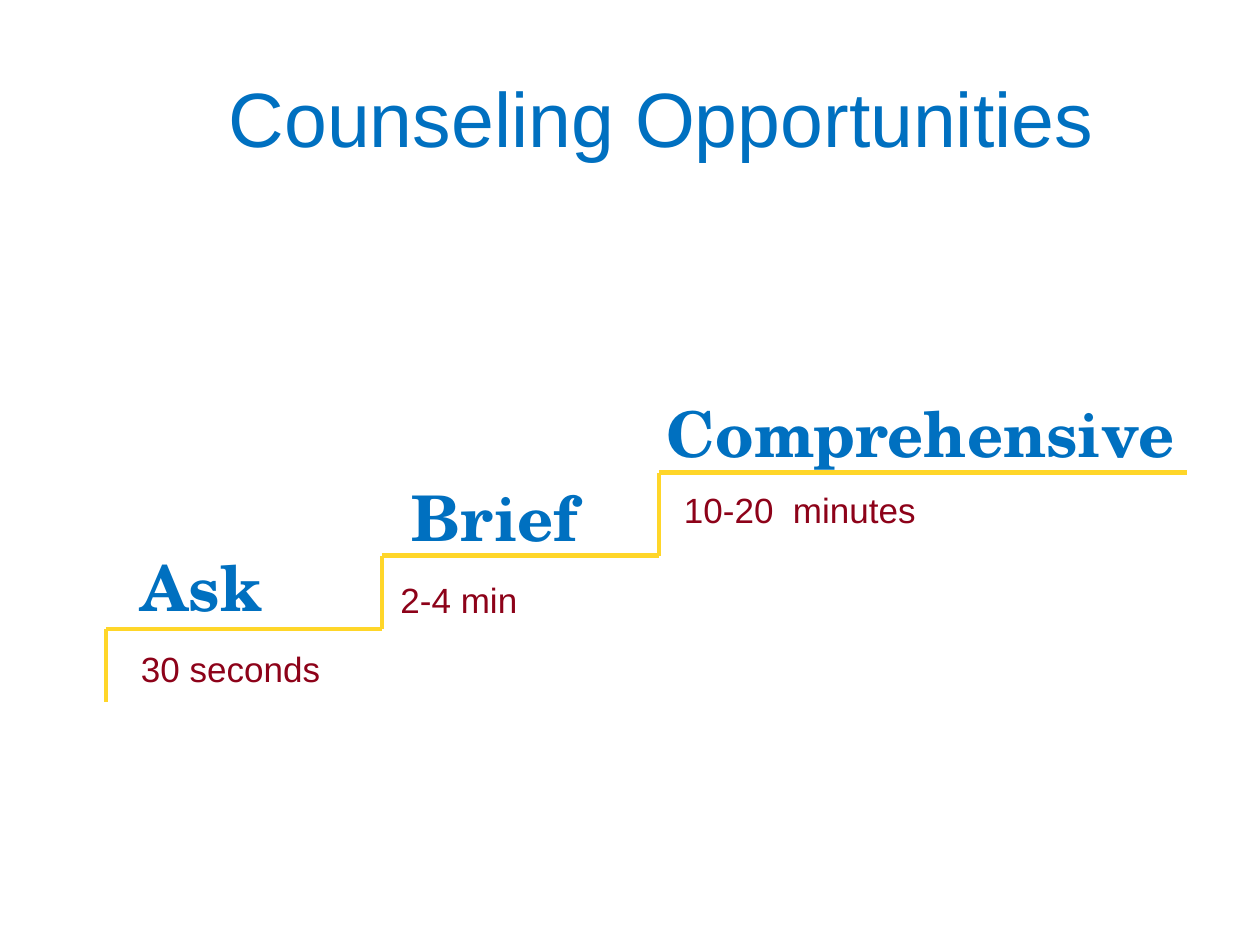
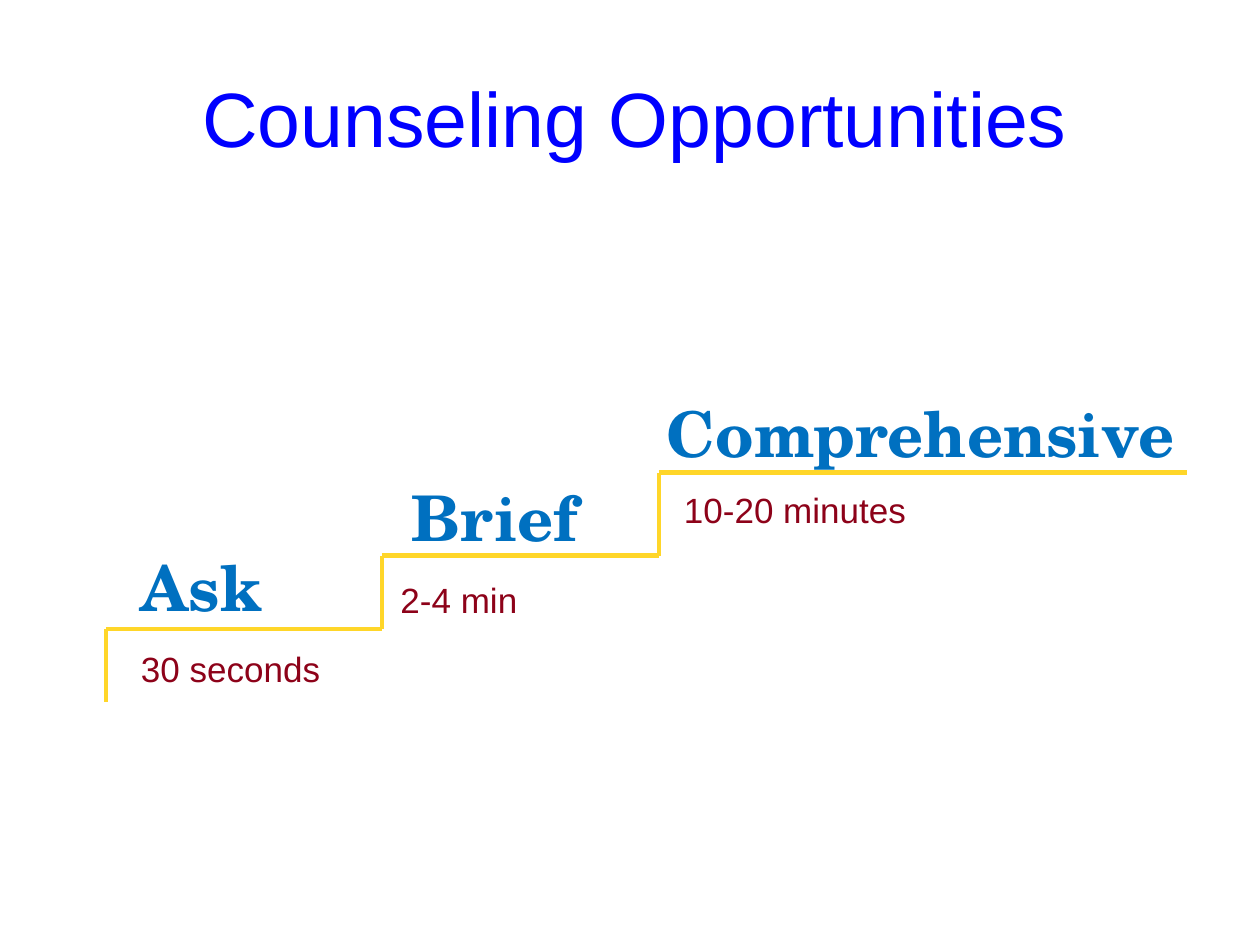
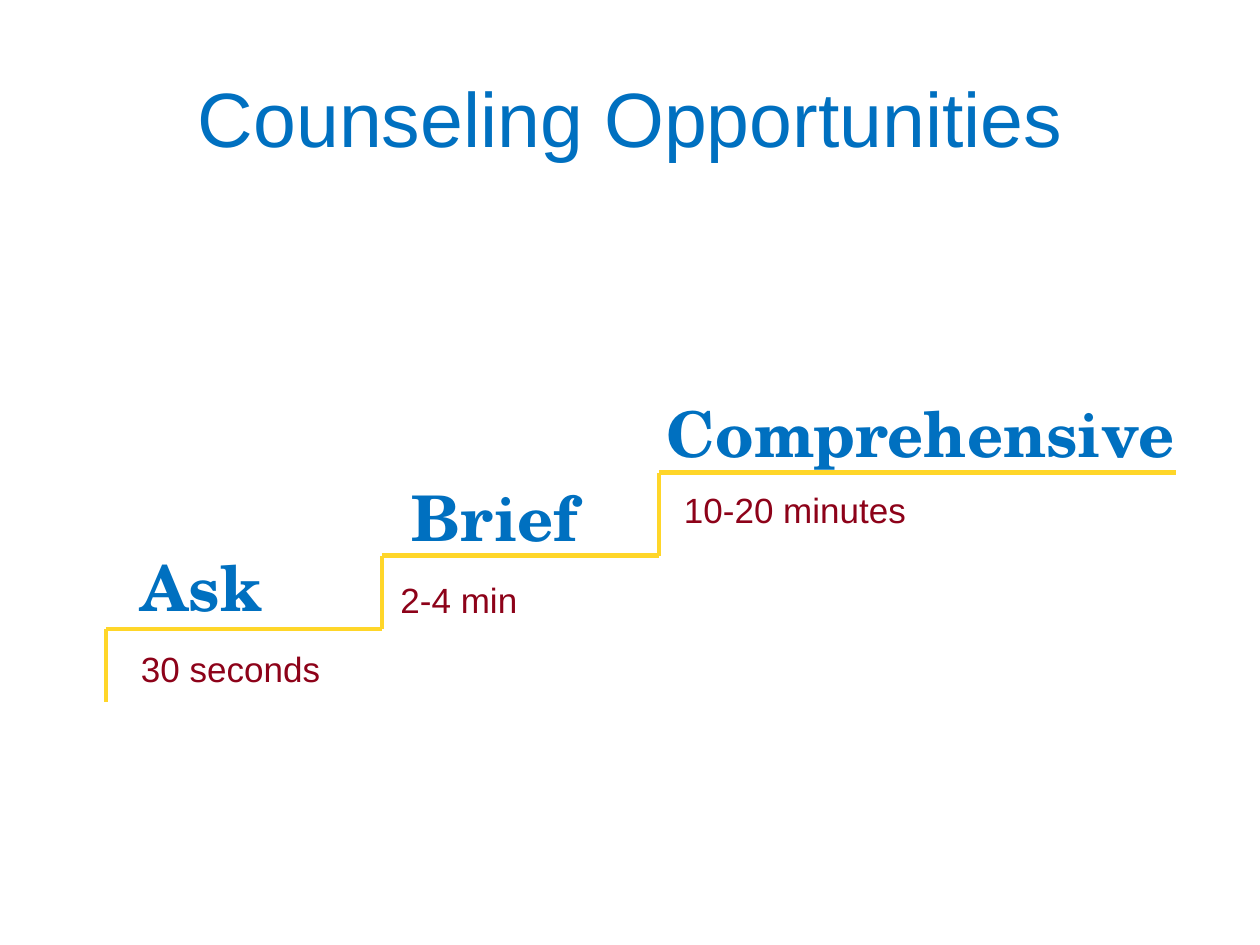
from dataclasses import dataclass
from itertools import pairwise

from pptx import Presentation
from pptx.dml.color import RGBColor
from pptx.enum.shapes import MSO_CONNECTOR
from pptx.enum.text import MSO_ANCHOR, MSO_AUTO_SIZE, PP_ALIGN
from pptx.oxml.xmlchemy import OxmlElement
from pptx.util import Inches, Pt


@dataclass(frozen=True)
class Theme:
    """Colours, fonts and type sizes shared by all slides."""
    blue: str = "0070C0"
    bright_blue: str = "0000FF"
    maroon: str = "8D0219"
    gold: str = "FFD629"
    body_font: str = "Arial"
    level_font: str = "TeX Gyre Schola"
    title_size: float = 44
    level_size: float = 36
    time_size: float = 20
    stair_width: float = 2.5


THEME = Theme()
STAIRS = [(0.84, 5.57), (0.84, 4.99), (3.03, 4.99), (3.03, 4.41), (5.23, 4.41), (5.23, 3.75)]
LEVELS = [
    ("Ask", 1.02, 4.3, 1.88, 0.1),
    ("Brief", 3.17, 3.75, 1.97, 0.1),
    ("Comprehensive", 5.08, 3.08, 4.92, 0.21),
]
TIMES = [("30 seconds", 1.02, 5.09, 2), ("2-4 min", 3.08, 4.54, 2)]
LONGEST_TIME = (5.33, 3.83, 3.76)
SLIDES = [
    (0.5, 9.5, THEME.blue, "10-20  minutes", 9.42),
    (0.25, 9.58, THEME.bright_blue, "10-20 minutes", 9.42),
    (0.17, 9.67, THEME.blue, "10-20 minutes", 9.33),
]


class Deck:
    """Draws styled elements on the current slide."""

    def __init__(self, theme):
        """Start an empty deck."""
        self.theme = theme
        self.presentation = Presentation()
        self.presentation.slide_width = Inches(10)
        self.presentation.slide_height = Inches(7.5)
        self.page = None

    def add_page(self):
        """Open a new blank slide."""
        self.page = self.presentation.slides.add_slide(self.presentation.slide_layouts[6])

    def text(self, words, left, top, width, height, font, size, color, bold=False, inset=0.1):
        """Add a one-paragraph text box."""
        box = self.page.shapes.add_textbox(Inches(left), Inches(top), Inches(width), Inches(height))
        frame = box.text_frame
        frame.word_wrap = True
        frame.margin_left = Inches(inset)
        para = frame.paragraphs[0]
        para.text = words
        para.font.name = font
        para.font.size = Pt(size)
        para.font.bold = bold
        para.font.color.rgb = RGBColor.from_string(color)
        return frame

    def title(self, words, left, width, color):
        """Add a centred slide title."""
        frame = self.text(words, left, 0.3, width, 1.25,
                          self.theme.body_font, self.theme.title_size, color)
        frame.vertical_anchor = MSO_ANCHOR.MIDDLE
        frame.paragraphs[0].alignment = PP_ALIGN.CENTER

    def level(self, words, left, top, width, inset):
        """Add the name standing on a stair."""
        frame = self.text(words, left, top, width, 0.71, self.theme.level_font,
                          self.theme.level_size, self.theme.blue, True, inset)
        frame.auto_size = MSO_AUTO_SIZE.SHAPE_TO_FIT_TEXT

    def time(self, words, left, top, width):
        """Add the duration below a stair."""
        frame = self.text(words, left, top, width, 0.44, self.theme.body_font,
                          self.theme.time_size, self.theme.maroon)
        frame.auto_size = MSO_AUTO_SIZE.SHAPE_TO_FIT_TEXT

    def stairs(self, corners):
        """Join the corners with straight lines."""
        for start, end in pairwise(corners):
            line = self.page.shapes.add_connector(
                MSO_CONNECTOR.STRAIGHT, *map(Inches, start + end))
            line.line.color.rgb = RGBColor.from_string(self.theme.gold)
            line.line.width = Pt(self.theme.stair_width)
            line._element.spPr.append(OxmlElement("a:effectLst"))


def main():
    """Build the three counseling slides."""
    deck = Deck(THEME)
    for title_left, title_width, title_color, longest, stairs_end in SLIDES:
        deck.add_page()
        deck.stairs(STAIRS + [(stairs_end, STAIRS[-1][1])])
        for level in LEVELS:
            deck.level(*level)
        for time in TIMES + [(longest, *LONGEST_TIME)]:
            deck.time(*time)
        deck.title("Counseling Opportunities", title_left, title_width, title_color)
    deck.presentation.save("out.pptx")


if __name__ == "__main__":
    main()
